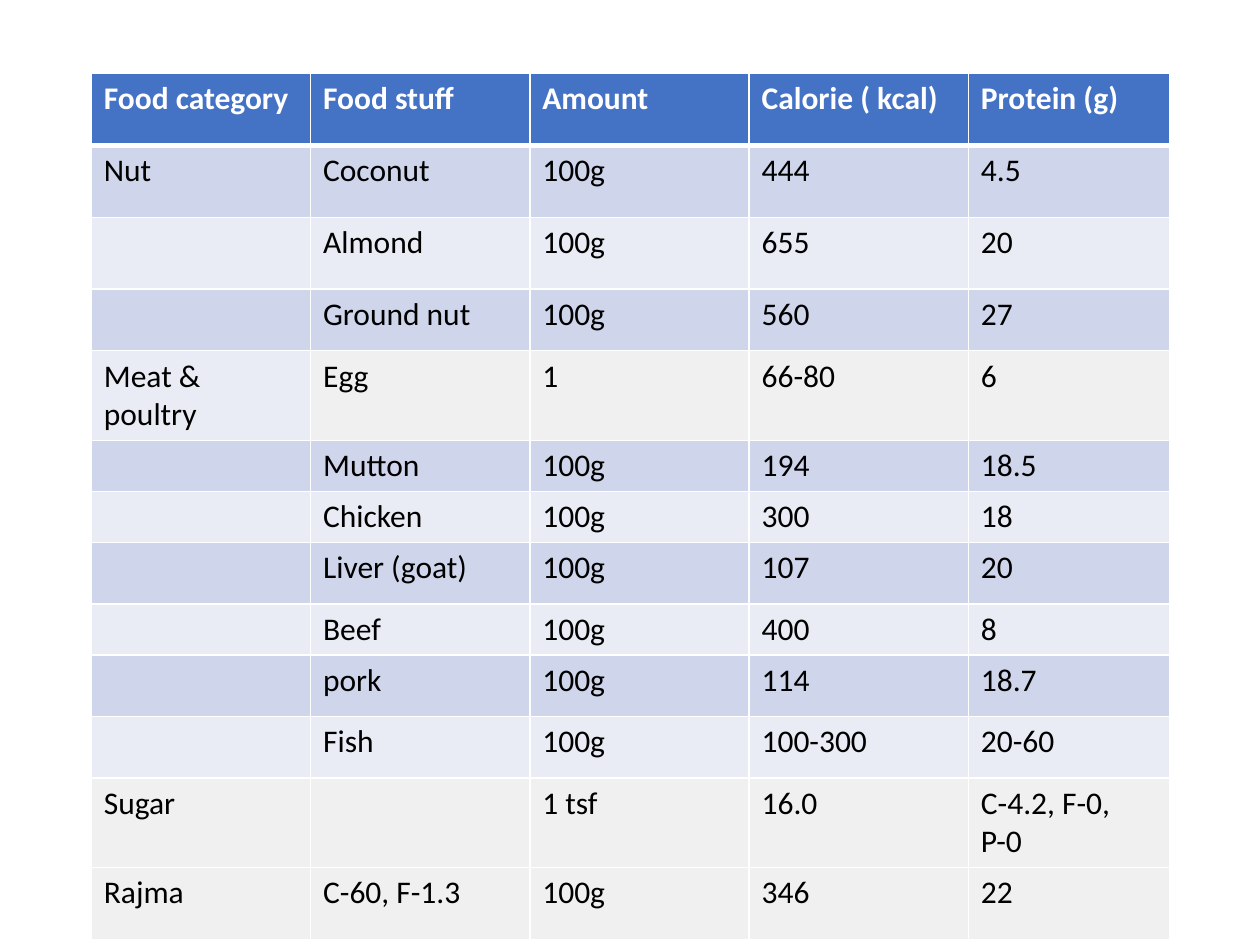
from dataclasses import dataclass

from lxml import etree
from pptx import Presentation
from pptx.dml.color import RGBColor
from pptx.oxml.ns import qn
from pptx.util import Cm, Pt


@dataclass(frozen=True)
class Theme:
    font: str = "Calibri"
    size: int = 18
    head: str = "4472C4"
    dark: str = "CFD5EA"
    light: str = "E9EBF5"
    grey: str = "F1F0F0"
    white: str = "FFFFFF"
    black: str = "000000"
    thin: int = 1
    thick: int = 3


@dataclass(frozen=True)
class Food:
    cells: tuple[str, ...]
    height: float
    grey: int = 5  # first column with a grey fill; 5 means none


THEME = Theme()
WIDTHS = (4.42, 4.42, 4.42, 4.42, 4.06)
TALL, MID, LOW = 1.45, 1.24, 1.03

FOODS = (
    Food(("Food category", "Food stuff", "Amount", "Calorie ( kcal)", "Protein (g)"), TALL),
    Food(("Nut", "Coconut", "100g", "444", "4.5"), TALL),
    Food(("", "Almond", "100g", "655", "20"), TALL),
    Food(("", "Ground nut", "100g", "560", "27"), MID),
    Food(("Meat & poultry", "Egg", "1", "66-80", "6"), MID, grey=1),
    Food(("", "Mutton", "100g", "194", "18.5"), LOW),
    Food(("", "Chicken", "100g", "300", "18"), LOW),
    Food(("", "Liver (goat)", "100g", "107", "20"), MID),
    Food(("", "Beef", "100g", "400", "8"), LOW),
    Food(("", "pork", "100g", "114", "18.7"), MID),
    Food(("", "Fish", "100g", "100-300", "20-60"), MID),
    Food(("Sugar", "", "1 tsf", "16.0", "C-4.2, F-0, P-0"), LOW, grey=0),
    Food(("Rajma", "C-60, F-1.3", "100g", "346", "22"), TALL, grey=0),
)


def pick_fill(food: Food, row: int, col: int) -> str:
    if row == 0:
        return THEME.head
    if col >= food.grey:
        return THEME.grey
    return THEME.dark if row % 2 else THEME.light


def add_edges(cell, row: int) -> None:
    """Draw white cell borders, thick between the header and the body."""
    props = cell._tc.get_or_add_tcPr()
    heavy = {0: "lnB", 1: "lnT"}.get(row)
    for spot, side in enumerate(("lnL", "lnR", "lnT", "lnB")):
        width = THEME.thick if side == heavy else THEME.thin
        line = etree.Element(qn(f"a:{side}"), w=str(Pt(width)))
        fill = etree.SubElement(line, qn("a:solidFill"))
        etree.SubElement(fill, qn("a:srgbClr"), val=THEME.white)
        props.insert(spot, line)


def fill_cell(cell, text: str, fill: str, head: bool) -> None:
    cell.fill.solid()
    cell.fill.fore_color.rgb = RGBColor.from_string(fill)
    cell.text = text
    font = cell.text_frame.paragraphs[0].font
    style = {"name": THEME.font, "size": Pt(THEME.size), "bold": head}
    for key, value in style.items():
        setattr(font, key, value)
    font.color.rgb = RGBColor.from_string(THEME.white if head else THEME.black)


def add_foods(slide) -> None:
    tall = sum(food.height for food in FOODS)
    table = slide.shapes.add_table(
        len(FOODS), len(WIDTHS), Cm(1.84), Cm(1.48), Cm(sum(WIDTHS)), Cm(tall)
    ).table
    for column, width in zip(table.columns, WIDTHS):
        column.width = Cm(width)
    for row, food in enumerate(FOODS):
        table.rows[row].height = Cm(food.height)
        for col, text in enumerate(food.cells):
            cell = table.cell(row, col)
            fill_cell(cell, text, pick_fill(food, row, col), row == 0)
            add_edges(cell, row)


def main() -> None:
    # Blank 4:3 slide
    deck = Presentation()
    deck.slide_width, deck.slide_height = Cm(25.4), Cm(19.05)
    slide = deck.slides.add_slide(deck.slide_layouts[6])
    # Food table
    add_foods(slide)
    deck.save("out.pptx")


if __name__ == "__main__":
    main()
